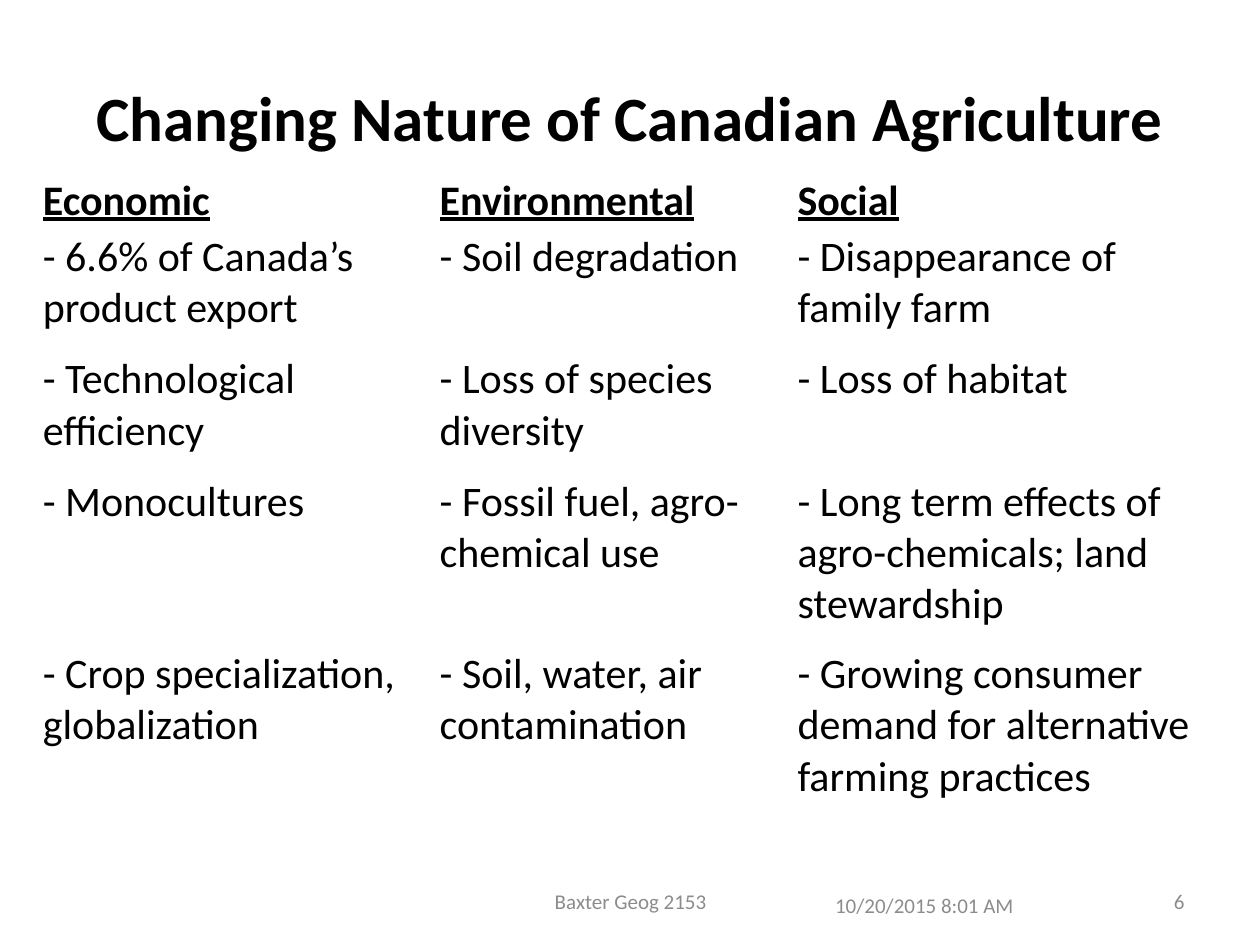
"""Build a slide comparing economic, environmental and social changes in Canadian agriculture."""
from pptx import Presentation
from pptx.dml.color import RGBColor
from pptx.enum.text import MSO_ANCHOR, PP_ALIGN
from pptx.util import Inches, Pt

LEFT, CENTER, RIGHT = PP_ALIGN.LEFT, PP_ALIGN.CENTER, PP_ALIGN.RIGHT
MIDDLE, TOP = MSO_ANCHOR.MIDDLE, MSO_ANCHOR.TOP

TITLE = "Changing Nature of Canadian Agriculture"
CHANGES = [
    ("Economic", "Environmental", "Social"),
    ("- 6.6% of Canada’s product export", "- Soil degradation",
     "- Disappearance of family farm"),
    ("- Technological efficiency", "- Loss of species diversity",
     "- Loss of habitat"),
    ("- Monocultures", "- Fossil fuel, agro- chemical use",
     "- Long term effects of agro-chemicals; land stewardship"),
    ("- Crop specialization, globalization", "- Soil, water, air contamination",
     "- Growing consumer demand for alternative farming practices"),
]
FOOTERS = [
    ("10/20/2015 8:01 AM", LEFT, (6.53, 6.98, 2.33, 0.4)),
    ("Baxter Geog 2153", CENTER, (3.42, 6.95, 3.17, 0.4)),
    ("6", RIGHT, (7.17, 6.95, 2.33, 0.4)),
]
COLUMN_WIDTHS = [3.15, 2.84, 3.52]
ROW_HEIGHTS = [0.45, 0.97, 0.97, 1.37, 1.6]
TITLE_BOX = (0.5, 0.3, 9, 1.25)
TABLE_CORNER = (0.28, 1.39)
CELL_INSET = 0.06
THEME = {
    "font": "Calibri",
    "title": (36, "000000"),
    "table": (24, "000000"),
    "footer": (12, "8C8C8C"),
}


def write(frame, text, role, align=LEFT, bold=False, underline=False):
    size, color = THEME[role]
    paragraph = frame.paragraphs[0]
    paragraph.alignment = align
    run = paragraph.add_run()
    run.text = text
    run.font.name = THEME["font"]
    run.font.size = Pt(size)
    run.font.color.rgb = RGBColor.from_string(color)
    run.font.bold = bold
    run.font.underline = underline


def add_title(slide):
    title = slide.shapes.title
    title.left, title.top, title.width, title.height = map(Inches, TITLE_BOX)
    title.text_frame.vertical_anchor = MIDDLE
    write(title.text_frame, TITLE, "title", CENTER, bold=True)


def add_footers(slide):
    for text, align, box in FOOTERS:
        frame = slide.shapes.add_textbox(*map(Inches, box)).text_frame
        frame.word_wrap = True
        frame.vertical_anchor = MIDDLE
        write(frame, text, "footer", align)


def add_changes(slide):
    size = (sum(COLUMN_WIDTHS), sum(ROW_HEIGHTS))
    table = slide.shapes.add_table(
        len(ROW_HEIGHTS), len(COLUMN_WIDTHS), *map(Inches, TABLE_CORNER + size)).table
    table.horz_banding = False
    table.first_row = False
    for column, width in zip(table.columns, COLUMN_WIDTHS):
        column.width = Inches(width)
    for row, height, texts in zip(table.rows, ROW_HEIGHTS, CHANGES):
        row.height = Inches(height)
        heading = texts is CHANGES[0]
        for cell, text in zip(row.cells, texts):
            cell.fill.background()
            cell.vertical_anchor = TOP
            cell.margin_left = cell.margin_right = Inches(CELL_INSET)
            cell.margin_top = cell.margin_bottom = 0
            write(cell.text_frame, text, "table", bold=heading, underline=heading)


def main():
    deck = Presentation()
    deck.slide_width, deck.slide_height = Inches(10), Inches(7.5)
    slide = deck.slides.add_slide(deck.slide_layouts.get_by_name("Title Only"))
    add_title(slide)
    add_footers(slide)
    add_changes(slide)
    deck.save("out.pptx")


if __name__ == "__main__":
    main()
